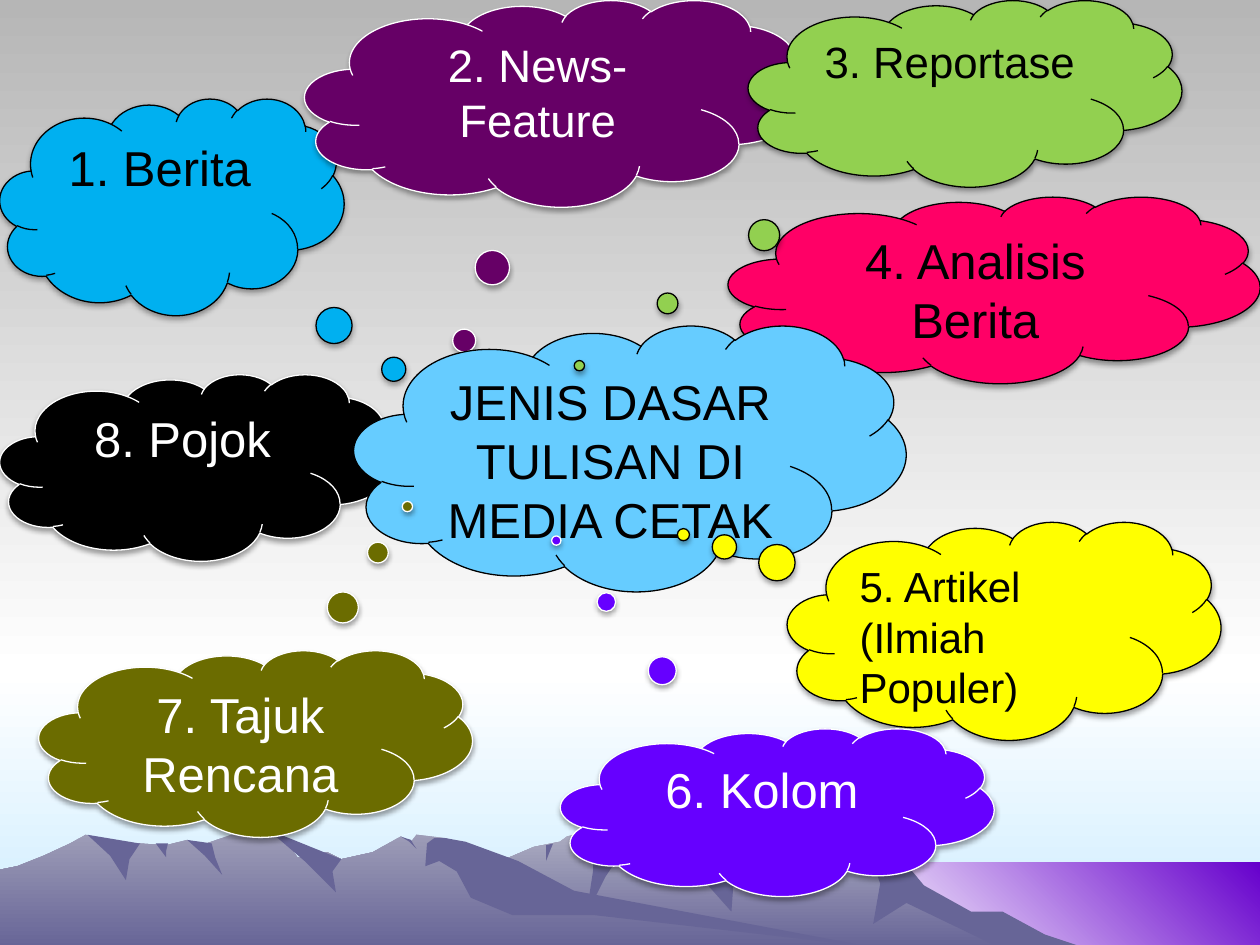
from dataclasses import dataclass

import pptx
import pptx.dml.color
import pptx.enum.shapes
import pptx.enum.text
import pptx.oxml
import pptx.oxml.ns
import pptx.util

Pt = pptx.util.Pt
Shape = pptx.enum.shapes.MSO_SHAPE
Align = pptx.enum.text.PP_ALIGN


@dataclass(frozen=True)
class Theme:
    font: str = "Arial"
    large: int = 28
    medium: int = 26
    reportage: int = 25
    small: int = 24
    black: str = "000000"
    white: str = "FFFFFF"
    dusk: str = "B6B6B6"
    haze: str = "CCECFF"
    violet: str = "6600CC"
    slope: str = "676597"
    front_crest: str = "9F9EB8"
    back_crest: str = "AEAEC2"
    centre: str = "66CCFF"
    news: str = "00B0F0"
    feature: str = "660066"
    report: str = "92D050"
    analysis: str = "FF0066"
    article: str = "FFFF00"
    column: str = "6600FF"
    editorial: str = "6B6C00"


THEME = Theme()
WIDTH, HEIGHT = 720, 540
HORIZON = 384       # where the sky meets the haze
LAKE = (492, 493)   # top left corner of the violet lake
FLOOR = 541         # foot of the mountains
GULLY_PINCH = 0.25  # how far the sides of a gully bend inwards
DOWNWARD, DIAGONAL = 270, 45
USUAL_WIDTH, USUAL_HEIGHT = 247.7, 106.6  # most clouds share these

# Skylines run from left to right and are closed along the floor.
BACK_SKYLINE = [
    (186, FLOOR), (199, 532), (235, 510), (256, 503), (284, 493), (305, 484),
    (320, 481), (324, 478), (339, 474), (350, 485), (366, 482), (379, 485),
    (386, 502), (408, 502), (441, 490), (453, 483), (472, 483), (493, 475),
    (505, 483), (521, 503), (550, 521), (560, 523), (577, 533), (591, FLOOR)]
FRONT_SKYLINE = [
    (0, 497), (10, 495), (25, 489), (40, 482), (49, 477), (68, 483), (80, 482),
    (95, 483), (107, 480), (115, 483), (141, 474), (153, 474), (161, 477),
    (170, 490), (187, 487), (195, 491), (213, 487), (229, 478), (235, 481),
    (238, 477), (255, 479), (311, 513), (480, 539), (497, FLOOR)]

# A shaded flank lies between an upper and a lower edge, both from left to right.
BACK_FLANK = {
    "upper": [(493, 475), (509, 483), (528, 506), (555, 521), (573, 521),
              (597, 534), (618, FLOOR)],
    "lower": [(498, 490), (503, 505), (499, 528), (518, 516), (570, FLOOR)]}
FRONT_FLANK = {
    "upper": [(244, 482), (248, 479), (255, 479), (266, 481), (296, 492),
              (328, 509), (497, FLOOR)],
    "lower": [(243, 495), (251, 492), (261, 498), (269, 513), (293, 523), (340, 523)]}

# A gully has a left and a right end on the crest, and a tip below.
BACK_GULLIES = [
    ((339, 474), (358, 483), (335, 523)),
    ((381, 487), (426, 496), (418, 521)),
    ((454, 483), (472, 483), (473, 492)),
    ((312, 483), (316, 482), (312, 492))]
FRONT_GULLIES = [
    ((153, 474), (195, 491), (192, 510)),
    ((229, 478), (235, 480), (238, 485)),
    ((107, 480), (121, 482), (127, 500)),
    ((89, 482), (96, 482), (95, 490)),
    ((50, 477), (80, 482), (72, 503))]


@dataclass(frozen=True)
class Cloud:
    """A labelled cloud; tip is the bubble trail's end, in cloud sizes from its centre."""
    wording: str
    left: float
    top: float
    fill: str
    tip: tuple = None
    width: float = USUAL_WIDTH
    height: float = USUAL_HEIGHT
    ink: str = THEME.black
    line: str = THEME.black
    size: int = THEME.large
    alignment: Align = Align.CENTER


LIGHT_INK = {"ink": THEME.white, "line": THEME.white}
CLOUDS = [
    Cloud("1. Berita", 0, 56.2, THEME.news, (0.79, 0.92), width=196.6, height=123.8),
    Cloud("8. Pojok", 0, 213.8, THEME.black, (0.57, -0.09), width=224.6, **LIGHT_INK),
    Cloud("2. News-Feature", 174.2, 0, THEME.feature, (-0.23, 1.45),
          width=286.6, height=118.1, size=THEME.medium, **LIGHT_INK),
    Cloud("4. Analisis Berita", 416.2, 112.3, THEME.analysis, (-0.47, 0.72), width=303.8),
    Cloud("JENIS DASAR TULISAN DI MEDIA CETAK", 202.3, 185.8, THEME.centre,
          width=315.4, height=151.9),
    Cloud("5. Artikel (Ilmiah Populer)", 450, 298.1, THEME.article, (-0.74, -0.44),
          height=124.6, size=THEME.small, alignment=Align.LEFT),
    Cloud("3. Reportase", 427.7, 0, THEME.report, (-0.89, 1.46), size=THEME.reportage),
    Cloud("6. Kolom", 320.4, 416.2, THEME.column, (-0.51, -1.62), height=95.8, **LIGHT_INK),
    Cloud("7. Tajuk Rencana", 22.3, 371.5, THEME.editorial, (0.35, -1.27), **LIGHT_INK),
]


def rgb(value):
    return pptx.dml.color.RGBColor.from_string(value)


def apply_format(target, values):
    for name, value in values.items():
        setattr(target, name, value)


def paint(fill, colour):
    fill.solid()
    fill.fore_color.rgb = rgb(colour)


def paint_gradient(fill, start, end, angle=DOWNWARD):
    fill.gradient()
    fill.gradient_angle = angle
    for position, (stop, colour) in enumerate(zip(fill.gradient_stops, (start, end))):
        stop.position = position
        stop.color.rgb = rgb(colour)


def add_panel(slide, left, top, right, bottom, colours, angle=DOWNWARD):
    panel = slide.shapes.add_shape(
        Shape.RECTANGLE, Pt(left), Pt(top), Pt(right - left), Pt(bottom - top))
    panel.shadow.inherit = False
    panel.line.fill.background()
    paint_gradient(panel.fill, *colours, angle)


def add_outline(slide, corners):
    builder = slide.shapes.build_freeform(*corners[0], scale=Pt(1))
    builder.add_line_segments(corners[1:], close=True)
    outline = builder.convert_to_shape()
    outline.shadow.inherit = False
    outline.line.fill.background()
    return outline


def add_ridge(slide, skyline, crest):
    """Fill the ground from a skyline down to the floor."""
    first, last = skyline[0][0], skyline[-1][0]
    ridge = add_outline(slide, [*skyline, (last, FLOOR), (first, FLOOR)])
    paint_gradient(ridge.fill, crest, THEME.slope)


def add_flank(slide, upper, lower):
    flank = add_outline(slide, upper + lower[::-1])
    paint(flank.fill, THEME.slope)


def add_gully(slide, left, right, tip):
    """Draw a shaded triangle whose two long sides bend towards its centre."""
    centre = [sum(values) / 3 for values in zip(left, right, tip)]

    def waist(end):
        return tuple(
            (start + stop) / 2 * (1 - GULLY_PINCH) + middle * GULLY_PINCH
            for start, stop, middle in zip(end, tip, centre))

    gully = add_outline(slide, [left, right, waist(right), tip, waist(left)])
    paint(gully.fill, THEME.slope)


def add_mountain(slide, skyline, crest, flank, gullies):
    add_ridge(slide, skyline, crest)
    add_flank(slide, **flank)
    for gully in gullies:
        add_gully(slide, *gully)


def add_landscape(slide):
    paint_gradient(slide.background.fill, THEME.dusk, THEME.white)
    add_panel(slide, 0, HORIZON, WIDTH, HEIGHT, (THEME.white, THEME.haze))
    add_panel(slide, 0, 0, WIDTH, HORIZON, (THEME.dusk, THEME.white))
    add_panel(slide, *LAKE, WIDTH, FLOOR, (THEME.white, THEME.violet), DIAGONAL)
    add_mountain(slide, BACK_SKYLINE, THEME.back_crest, BACK_FLANK, BACK_GULLIES)
    add_mountain(slide, FRONT_SKYLINE, THEME.front_crest, FRONT_FLANK, FRONT_GULLIES)


def add_soft_shadow(shape):
    """Put a short, blurred shadow straight below the shape."""
    effects = shape._element.spPr.find(pptx.oxml.ns.qn("a:effectLst"))
    effects.append(pptx.oxml.parse_xml(
        f'<a:outerShdw {pptx.oxml.ns.nsdecls("a")} blurRad="{Pt(3.1)}" dist="{Pt(1.7)}" '
        f'dir="5400000" rotWithShape="0"><a:srgbClr val="{THEME.black}">'
        '<a:alpha val="36000"/></a:srgbClr></a:outerShdw>'))


def add_cloud(slide, cloud):
    kind = Shape.CLOUD_CALLOUT if cloud.tip else Shape.CLOUD
    bounds = map(Pt, (cloud.left, cloud.top, cloud.width, cloud.height))
    shape = slide.shapes.add_shape(kind, *bounds)
    shape.shadow.inherit = False
    if cloud.tip:
        shape.adjustments[0], shape.adjustments[1] = cloud.tip
        add_soft_shadow(shape)
    paint(shape.fill, cloud.fill)
    paint(shape.line.fill, cloud.line)
    shape.line.width = Pt(0.75)
    frame = shape.text_frame
    apply_format(frame, {"word_wrap": True,
                         "vertical_anchor": pptx.enum.text.MSO_ANCHOR.TOP})
    para = frame.paragraphs[0]
    para.alignment = cloud.alignment
    span = para.add_run()
    span.text = cloud.wording
    apply_format(span.font, {"name": THEME.font, "size": Pt(cloud.size)})
    span.font.color.rgb = rgb(cloud.ink)


def main():
    deck = pptx.Presentation()
    apply_format(deck, {"slide_width": Pt(WIDTH), "slide_height": Pt(HEIGHT)})
    slide = deck.slides.add_slide(deck.slide_layouts[6])
    add_landscape(slide)
    for cloud in CLOUDS:
        add_cloud(slide, cloud)
    deck.save("out.pptx")


if __name__ == "__main__":
    main()
